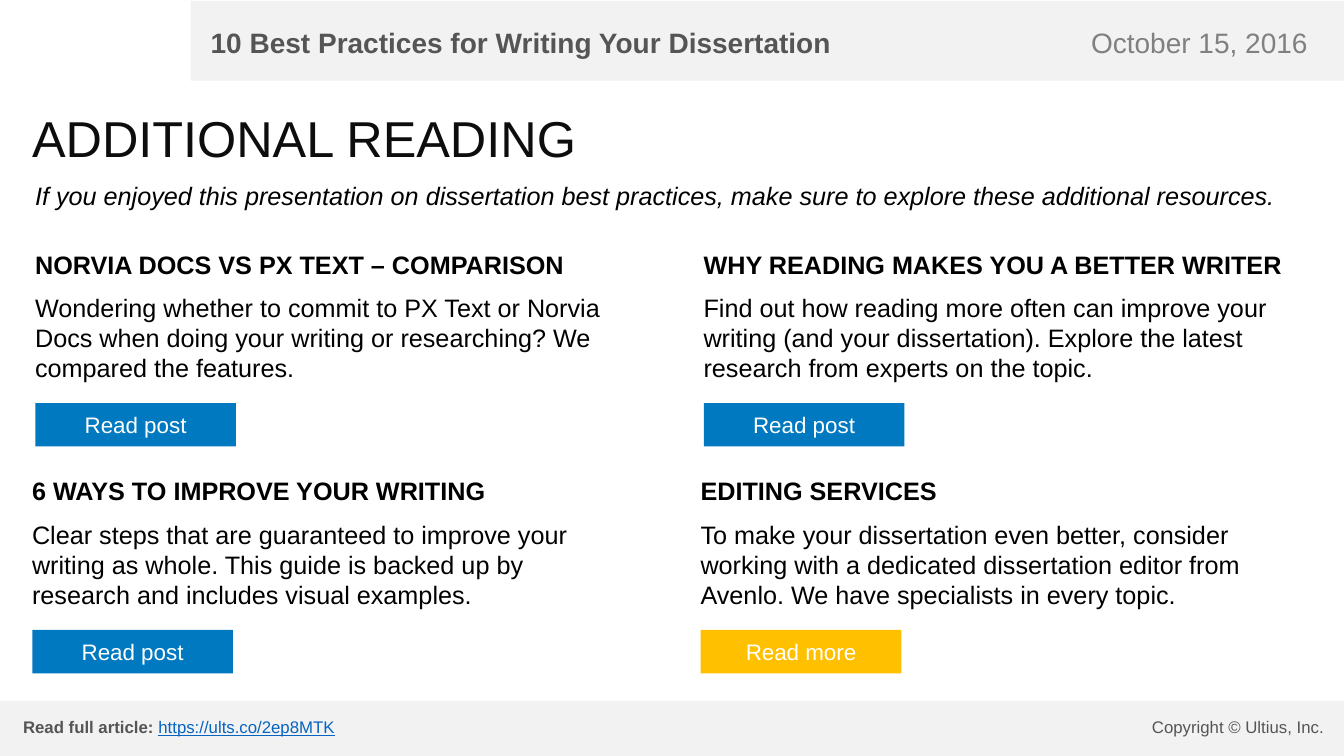
from pptx import Presentation
from pptx.dml.color import RGBColor
from pptx.enum.shapes import MSO_SHAPE as Shape
from pptx.enum.text import MSO_ANCHOR as Anchor, PP_ALIGN as Align
from pptx.util import Inches, Pt

COLORS = {
    "band": "F2F2F2",
    "gray": "555555",
    "date": "808080",
    "title": "0D0D0D",
    "black": "000000",
    "white": "FFFFFF",
    "link": "0563C1",
    "blue": "0079C1",
    "amber": "FFC000",
}

presentation = Presentation()
presentation.slide_width = Inches(13.33)
presentation.slide_height = Inches(7.5)
slide = presentation.slides.add_slide(presentation.slide_layouts[6])


def add_text(box, text, size, color, bold=False, italic=False, align=Align.LEFT):
    shape = slide.shapes.add_textbox(*map(Inches, box))
    shape.text_frame.word_wrap = True
    shape.text_frame.text = text
    paragraph = shape.text_frame.paragraphs[0]
    paragraph.alignment = align
    font = paragraph.runs[0].font
    font.name, font.size, font.bold, font.italic = "Arial", Pt(size), bold, italic
    font.color.rgb = RGBColor.from_string(COLORS[color])
    return paragraph


def add_rectangle(box, color):
    shape = slide.shapes.add_shape(Shape.RECTANGLE, *map(Inches, box))
    shape.shadow.inherit = False
    shape.fill.solid()
    shape.fill.fore_color.rgb = RGBColor.from_string(COLORS[color])
    shape.line.fill.background()
    return shape


add_rectangle((1.89, 0.01, 11.44, 0.79), "band")
add_text((1.99, 0.2, 6.61, 0.44), "10 Best Practices for Writing Your Dissertation", 20, "gray", bold=True)
add_text((9.84, 0.2, 3.23, 0.44), "October 15, 2016", 20, "date", align=Align.RIGHT)

add_rectangle((0, 6.95, 13.33, 0.55), "band")
article = add_text((0.13, 7.06, 10.38, 0.3), "Read full article: ", 12, "gray", bold=True)
address = article.add_run()
address.text = "https://ults.co/2ep8MTK"
address.font.name, address.font.size, address.font.underline = "Arial", Pt(12), True
address.font.color.rgb = RGBColor.from_string(COLORS["link"])
add_text((10.48, 7.06, 2.75, 0.3), "Copyright © Ultius, Inc.", 12, "gray", align=Align.RIGHT)

add_text((0.22, 1.01, 11.87, 0.71), "ADDITIONAL READING", 36, "title")
add_text(
    (0.25, 1.74, 12.7, 0.4),
    "If you enjoyed this presentation on dissertation best practices, "
    "make sure to explore these additional resources.",
    18, "black", italic=True,
)

resources = [
    ("NORVIA DOCS VS PX TEXT – COMPARISON",
     "Wondering whether to commit to PX Text or Norvia Docs when doing your "
     "writing or researching? We compared the features.",
     "Read post", "blue"),
    ("WHY READING MAKES YOU A BETTER WRITER",
     "Find out how reading more often can improve your writing (and your "
     "dissertation). Explore the latest research from experts on the topic.",
     "Read post", "blue"),
    ("6 WAYS TO IMPROVE YOUR WRITING",
     "Clear steps that are guaranteed to improve your writing as whole. This "
     "guide is backed up by research and includes visual examples.",
     "Read post", "blue"),
    ("EDITING SERVICES",
     "To make your dissertation even better, consider working with a dedicated "
     "dissertation editor from Avenlo. We have specialists in every topic.",
     "Read more", "amber"),
]

for index, (heading, summary, label, color) in enumerate(resources):
    row, column = divmod(index, 2)
    left = 0.25 - 0.03 * row + 6.63 * column
    top = 2.42 + 2.25 * row
    add_text((left, top, 6.31, 0.4), heading, 18, "black", bold=True)
    add_text((left, top + 0.43, 6.1, 1.01), summary, 18, "black")

    button = add_rectangle((left + 0.1, top + 1.58, 1.99, 0.43), color)
    button.text_frame.text = label
    button.text_frame.vertical_anchor = Anchor.MIDDLE
    paragraph = button.text_frame.paragraphs[0]
    paragraph.alignment = Align.CENTER
    font = paragraph.runs[0].font
    font.name, font.size = "Arial", Pt(16)
    font.color.rgb = RGBColor.from_string(COLORS["white"])

presentation.save("out.pptx")
